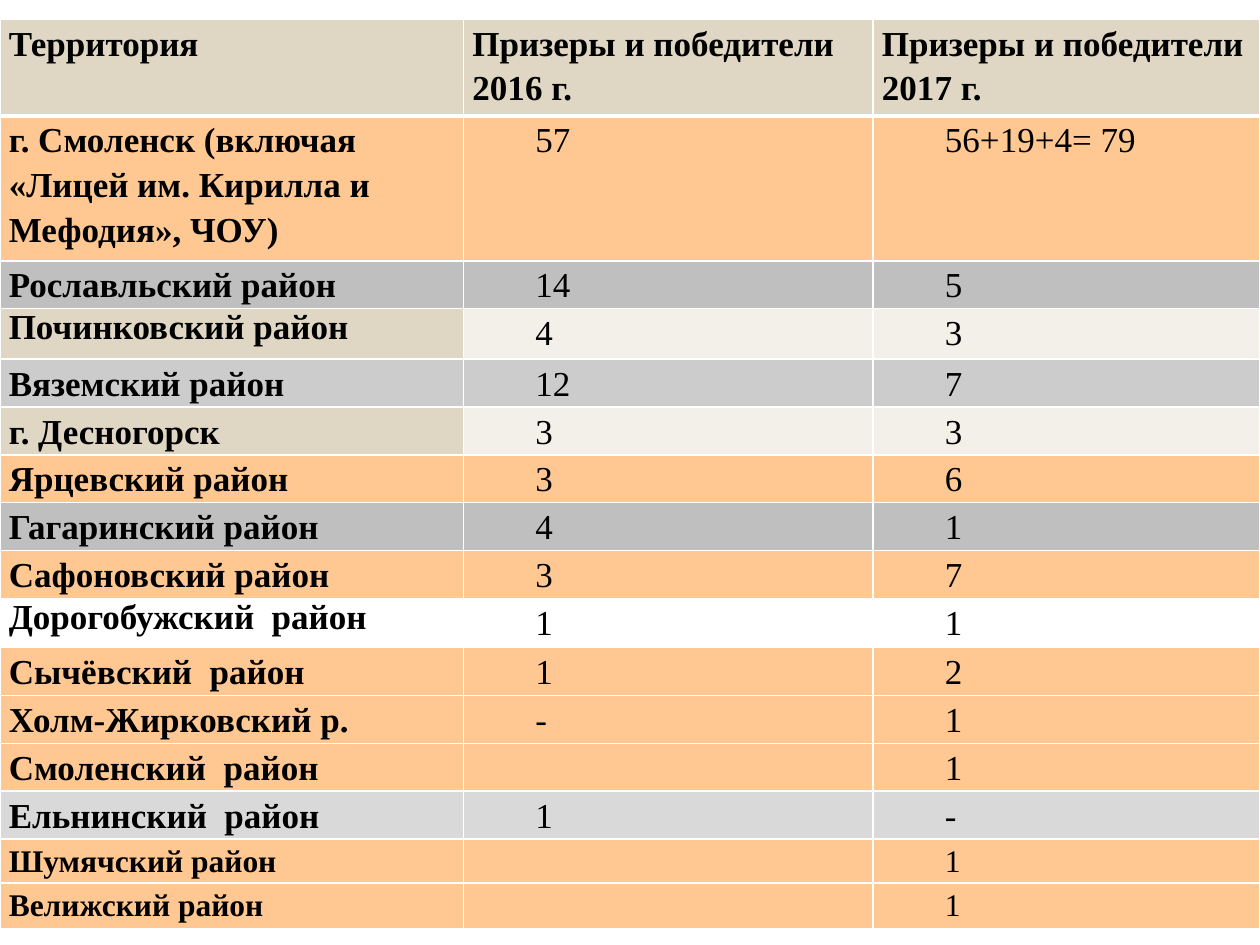
from dataclasses import dataclass

from lxml.etree import SubElement
from pptx import Presentation
from pptx.dml.color import RGBColor
from pptx.enum.text import PP_ALIGN
from pptx.oxml.ns import qn
from pptx.util import Inches, Pt


@dataclass(frozen=True)
class Theme:
    font: str = "Times New Roman"
    text: str = "000000"
    border: str = "FFFFFF"
    sand: str = "DFD6C3"
    cream: str = "F3F0E9"
    orange: str = "FFC892"
    gray: str = "BFBFBF"
    silver: str = "CCCCCC"
    pale: str = "D9D9D9"
    white: str = "FFFFFF"
    body_size: int = 20
    small_size: int = 18
    thin: int = 1
    thick: int = 3


THEME = Theme()


@dataclass(frozen=True)
class District:
    name: str
    winners_2016: str
    winners_2017: str
    fill: str = THEME.orange
    height: float = 0.38
    name_fill: str = ""
    name_spacing: float = 1.15
    size: int = THEME.body_size


HEADINGS = ("Территория", "Призеры и победители 2016 г.", "Призеры и победители\n2017 г.")
HEADING_HEIGHT = 0.77
COLUMN_WIDTHS = (3.68, 3.25, 3.07)
DISTRICTS = (
    District("г. Смоленск (включая «Лицей им. Кирилла и Мефодия», ЧОУ)", "57", "56+19+4= 79", height=1.15),
    District("Рославльский район", "14", "5", THEME.gray),
    District("Починковский район", "4", "3", THEME.cream, 0.4, THEME.sand, 1.0),
    District("Вяземский район", "12", "7", THEME.silver),
    District("г. Десногорск", "3", "3", THEME.cream, name_fill=THEME.sand),
    District("Ярцевский район", "3", "6"),
    District("Гагаринский район", "4", "1", THEME.gray),
    District("Сафоновский район", "3", "7"),
    District("Дорогобужский  район", "1", "1", THEME.white, 0.39, name_spacing=1.0),
    District("Сычёвский  район", "1", "2"),
    District("Холм-Жирковский р.", "-", "1"),
    District("Смоленский  район", "", "1"),
    District("Ельнинский  район", "1", "-", THEME.pale),
    District("Шумячский район", "", "1", height=0.35, size=THEME.small_size),
    District("Велижский район", "", "1", height=0.36, size=THEME.small_size),
)


def apply_format(target, values):
    for name, value in values.items():
        setattr(target, name, value)


def draw_borders(cell, top, bottom):
    properties = cell._tc.get_or_add_tcPr()
    widths = {"a:lnL": THEME.thin, "a:lnR": THEME.thin, "a:lnT": top, "a:lnB": bottom}
    for side, width in widths.items():
        border = SubElement(properties, qn(side), w=str(Pt(width)))
        fill = SubElement(border, qn("a:solidFill"))
        SubElement(fill, qn("a:srgbClr"), val=THEME.border)


def style_cell(cell, fill, top=THEME.thin, bottom=THEME.thin):
    apply_format(cell, {
        "margin_left": Inches(0.07), "margin_right": Inches(0.07),
        "margin_top": 0, "margin_bottom": 0,
    })
    draw_borders(cell, top, bottom)
    cell.fill.solid()
    cell.fill.fore_color.rgb = RGBColor.from_string(fill)


def write_text(cell, text, size=THEME.body_size, bold=True, spacing=1.15):
    if not text:
        return
    cell.text_frame.text = text
    for paragraph in cell.text_frame.paragraphs:
        paragraph.line_spacing = spacing
        for run in paragraph.runs:
            apply_format(run.font, {"name": THEME.font, "size": Pt(size), "bold": bold})
            run.font.color.rgb = RGBColor.from_string(THEME.text)


def write_count(cell, count, size):
    write_text(cell, count, size, bold=False)
    paragraph = cell.text_frame.paragraphs[0]
    paragraph.alignment = PP_ALIGN.JUSTIFY
    properties = paragraph._p.get_or_add_pPr()
    properties.set("marL", str(Inches(0.5)))
    properties.set("indent", "0")


def fill_headings(row):
    row.height = Inches(HEADING_HEIGHT)
    for cell, heading in zip(row.cells, HEADINGS):
        style_cell(cell, THEME.sand, bottom=THEME.thick)
        write_text(cell, heading)


def fill_district(row, district, top):
    row.height = Inches(district.height)
    name_cell, *count_cells = row.cells
    style_cell(name_cell, district.name_fill or district.fill, top)
    write_text(name_cell, district.name, district.size, spacing=district.name_spacing)
    for cell, count in zip(count_cells, (district.winners_2016, district.winners_2017)):
        style_cell(cell, district.fill, top)
        write_count(cell, count, district.size)


def add_winners_table(slide):
    height = HEADING_HEIGHT + sum(district.height for district in DISTRICTS)
    winners = slide.shapes.add_table(
        len(DISTRICTS) + 1, len(COLUMN_WIDTHS),
        Inches(0), Inches(0.15), Inches(sum(COLUMN_WIDTHS)), Inches(height),
    ).table
    winners.horz_banding = False
    for column, width in zip(winners.columns, COLUMN_WIDTHS):
        column.width = Inches(width)
    heading_row, *district_rows = winners.rows
    fill_headings(heading_row)
    for index, (row, district) in enumerate(zip(district_rows, DISTRICTS)):
        fill_district(row, district, THEME.thin if index else THEME.thick)


def main():
    presentation = Presentation()
    apply_format(presentation, {"slide_width": Inches(10), "slide_height": Inches(7.5)})
    slide = presentation.slides.add_slide(presentation.slide_layouts[6])
    add_winners_table(slide)
    presentation.save("out.pptx")


if __name__ == "__main__":
    main()
